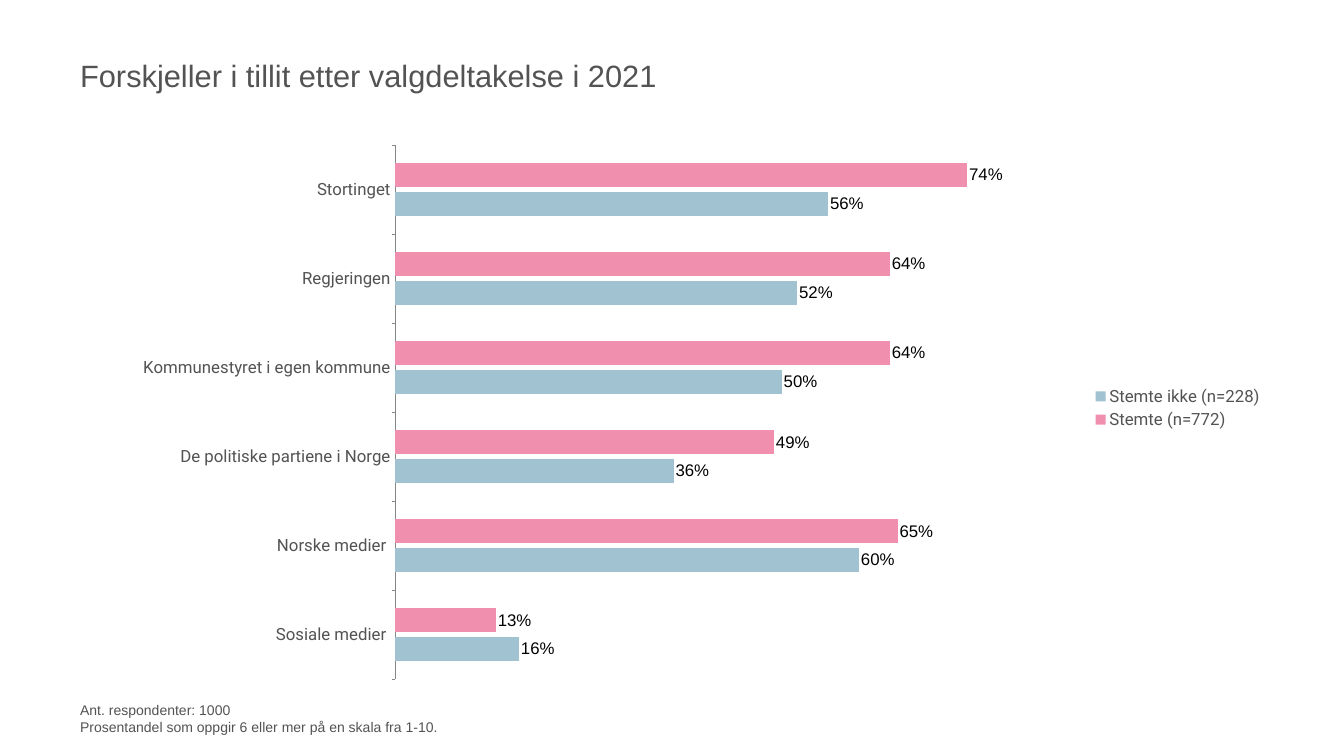
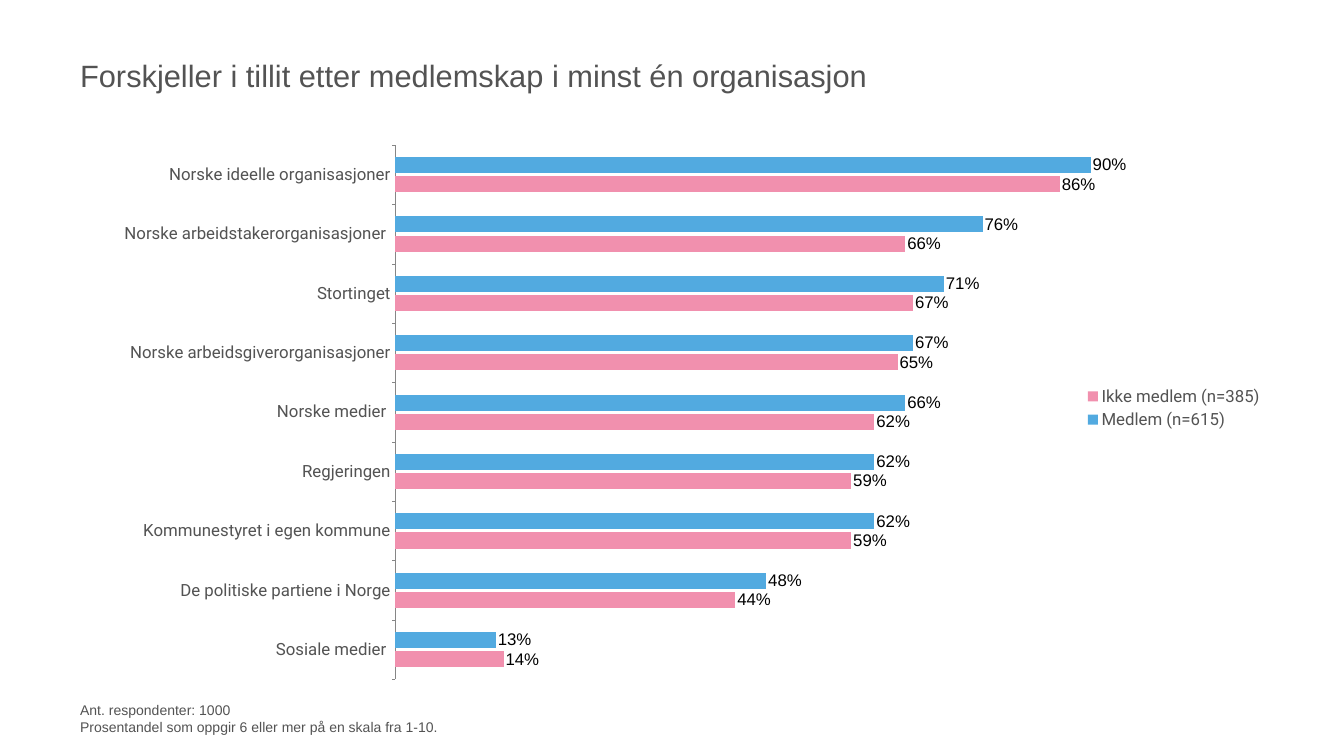
from lxml.etree import SubElement
from pptx import Presentation
from pptx.chart.data import CategoryChartData
from pptx.dml.color import RGBColor
from pptx.enum.chart import (XL_CHART_TYPE, XL_LABEL_POSITION as LABEL_POS,
                             XL_LEGEND_POSITION as LEGEND_POS,
                             XL_TICK_LABEL_POSITION as TICK_LABELS,
                             XL_TICK_MARK as TICK)
from pptx.enum.text import MSO_ANCHOR
from pptx.oxml.ns import qn
from pptx.util import Inches, Pt

GREY = RGBColor(0x53, 0x53, 0x53)
AXIS_GREY = RGBColor(0x86, 0x86, 0x86)
BLACK = RGBColor(0, 0, 0)
PINK = RGBColor(0xF1, 0x90, 0xAE)
PALE_BLUE = RGBColor(0xA1, 0xC2, 0xD0)
BLUE = RGBColor(0x52, 0xAA, 0xE0)

TEXT_FONT, LABEL_FONT = "Arial", "Roboto"
LEFT, WIDTH = 1.53, 23.66
TITLE_BOX = (LEFT, 0.47, WIDTH, 2.04)
CHART_BOX = (LEFT, 2.51, WIDTH, 11.17)
NOTE_BOX = (LEFT, 13.68, WIDTH, 0.9)
PLOT_AREA = {"x": 0.267, "y": 0.033, "w": 0.648, "h": 0.949}
NOTE_LINES = ("Ant. respondenter: 1000",
              "Prosentandel som oppgir 6 eller mer på en skala fra 1-10.")

SLIDES = [
    ("Forskjeller i tillit etter valgdeltakelse i 2021",
     ["Stortinget", "Regjeringen", "Kommunestyret i egen kommune",
      "De politiske partiene i Norge", "Norske medier ", "Sosiale medier "],
     [("Stemte (n=772)", PINK, (0.74, 0.64, 0.64, 0.49, 0.65, 0.13)),
      ("Stemte ikke (n=228)", PALE_BLUE, (0.56, 0.52, 0.5, 0.36, 0.6, 0.16))]),
    ("Forskjeller i tillit etter medlemskap i minst én organisasjon",
     ["Norske ideelle organisasjoner", "Norske arbeidstakerorganisasjoner ",
      "Stortinget", "Norske arbeidsgiverorganisasjoner", "Norske medier ",
      "Regjeringen", "Kommunestyret i egen kommune",
      "De politiske partiene i Norge", "Sosiale medier "],
     [("Medlem (n=615)", BLUE,
       (0.9, 0.76, 0.71, 0.67, 0.66, 0.62, 0.62, 0.48, 0.13)),
      ("Ikke medlem (n=385)", PINK,
       (0.86, 0.66, 0.67, 0.65, 0.62, 0.59, 0.59, 0.44, 0.14))]),
]


def set_font(font, size, color, name):
    font.size, font.name = Pt(size), name
    font.color.rgb = color


def add_text(slide, box, lines, size, anchor, bottom=0.06):
    """Add one paragraph, with a line break between lines."""
    tf = slide.shapes.add_textbox(*map(Inches, box)).text_frame
    tf.word_wrap = True
    tf.vertical_anchor = anchor
    tf.margin_left = tf.margin_right = tf.margin_top = Inches(0.06)
    tf.margin_bottom = Inches(bottom)
    p = tf.paragraphs[0]
    for i, line in enumerate(lines):
        if i:
            p.add_line_break()
        r = p.add_run()
        r.text = line
        set_font(r.font, size, GREY, TEXT_FONT)


def fix_plot_area(chart):
    """Pin the inner plot area to fractions of the chart."""
    area = chart.plots[0]._element.getparent()
    layout = area.find(qn("c:layout"))
    if layout is None:
        layout = SubElement(area, qn("c:layout"))
        area.insert(0, layout)
    manual = SubElement(layout, qn("c:manualLayout"))
    settings = [("layoutTarget", "inner"), ("xMode", "edge"), ("yMode", "edge")]
    for tag, value in settings + list(PLOT_AREA.items()):
        SubElement(manual, qn("c:" + tag)).set("val", str(value))


def style_axes(chart):
    cat = chart.category_axis
    cat.reverse_order = True
    cat.has_major_gridlines = False
    cat.major_tick_mark, cat.minor_tick_mark = TICK.OUTSIDE, TICK.NONE
    cat.tick_label_position = TICK_LABELS.NEXT_TO_AXIS
    cat.format.line.color.rgb = AXIS_GREY
    cat.format.line.width = Pt(0.75)
    set_font(cat.tick_labels.font, 24, GREY, LABEL_FONT)
    val = chart.value_axis
    val.visible = False
    val.has_major_gridlines = False
    val.minimum_scale, val.maximum_scale = 0, 1


def add_bar_chart(slide, box, cats, series):
    data = CategoryChartData(number_format="0%")
    data.categories = cats
    for name, _, values in series:
        data.add_series(name, values)
    chart = slide.shapes.add_chart(
        XL_CHART_TYPE.BAR_CLUSTERED, *map(Inches, box), data).chart
    chart.has_title = False
    set_font(chart.font, 10, BLACK, TEXT_FONT)
    plot = chart.plots[0]
    plot.gap_width, plot.overlap = 150, -20
    plot.vary_by_categories = False
    for bars, (_, color, _) in zip(plot.series, series):
        bars.format.fill.solid()
        bars.format.fill.fore_color.rgb = color
        bars.invert_if_negative = False
        labels = bars.data_labels
        labels.show_value = True
        labels.position = LABEL_POS.OUTSIDE_END
        labels.number_format, labels.number_format_is_linked = "0%", False
        set_font(labels.font, 24, BLACK, TEXT_FONT)
    style_axes(chart)
    chart.has_legend = True
    chart.legend.position = LEGEND_POS.RIGHT
    chart.legend.include_in_layout = False
    set_font(chart.legend.font, 24, GREY, LABEL_FONT)
    fix_plot_area(chart)


def add_trust_slide(prs, title, cats, series):
    slide = prs.slides.add_slide(prs.slide_layouts[6])
    add_text(slide, TITLE_BOX, [title], 44, MSO_ANCHOR.MIDDLE)
    add_bar_chart(slide, CHART_BOX, cats, series)
    add_text(slide, NOTE_BOX, NOTE_LINES, 20, MSO_ANCHOR.BOTTOM, bottom=0)


def main():
    prs = Presentation()
    prs.slide_width, prs.slide_height = Inches(26.67), Inches(15)
    for content in SLIDES:
        add_trust_slide(prs, *content)
    prs.save("out.pptx")


if __name__ == "__main__":
    main()
